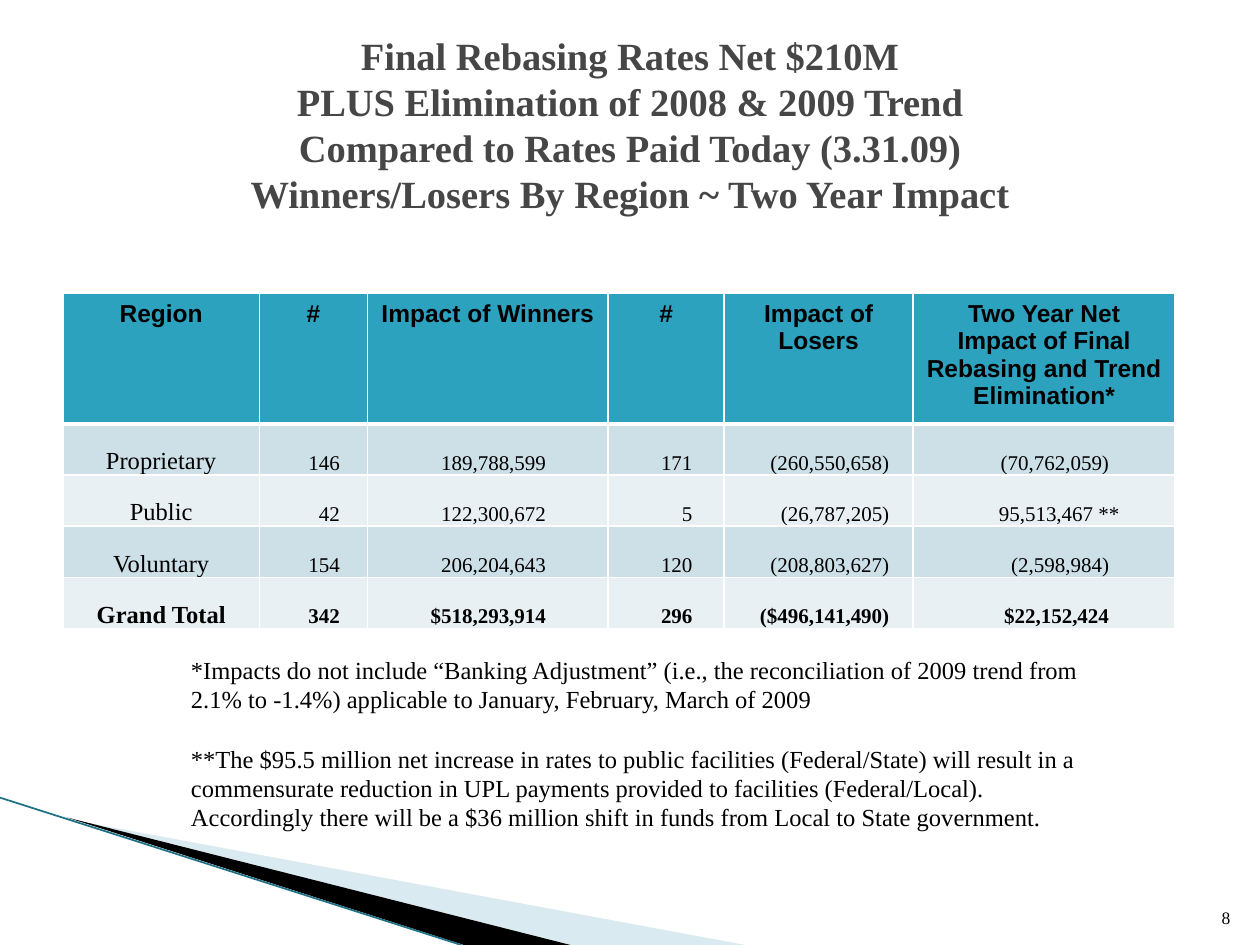
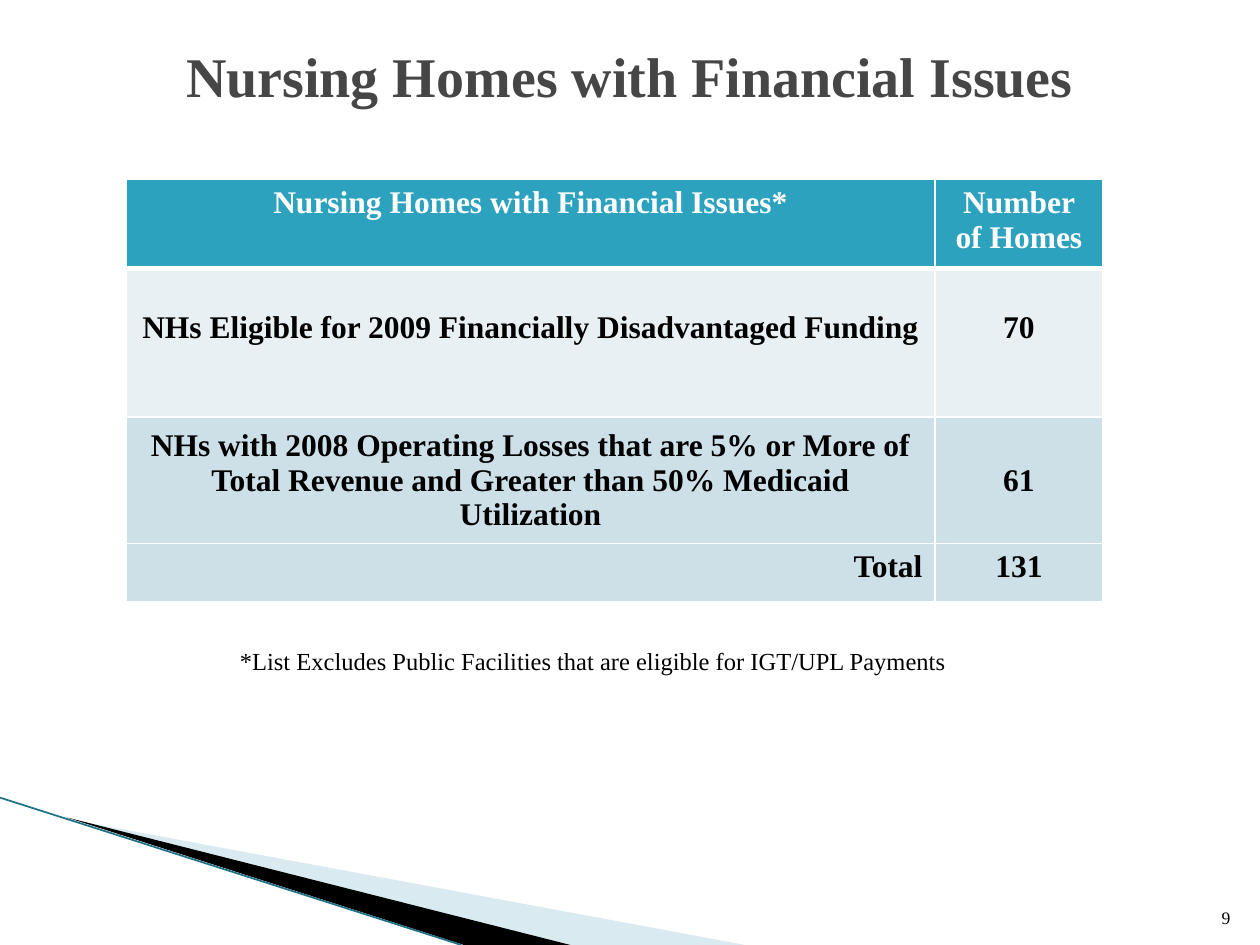
from dataclasses import dataclass

from lxml import etree
from pptx import Presentation
from pptx.dml.color import RGBColor
from pptx.enum.shapes import MSO_CONNECTOR
from pptx.enum.text import MSO_ANCHOR, MSO_AUTO_SIZE, PP_ALIGN
from pptx.oxml.ns import qn
from pptx.util import Cm, Pt

LEFT, CENTER, RIGHT = PP_ALIGN.LEFT, PP_ALIGN.CENTER, PP_ALIGN.RIGHT
TOP, MIDDLE, BOTTOM = MSO_ANCHOR.TOP, MSO_ANCHOR.MIDDLE, MSO_ANCHOR.BOTTOM
NO_AUTOFIT = MSO_AUTO_SIZE.NONE
STRAIGHT = MSO_CONNECTOR.STRAIGHT
TITLE_ONLY = 5


@dataclass(frozen=True)
class Theme:
    serif: str = "Times New Roman"
    sans: str = "Arial"
    title: str = "464646"
    black: str = "000000"
    white: str = "FFFFFF"
    header: str = "2DA2BF"
    row_dark: str = "CDE0E8"
    row_light: str = "E8F0F4"
    sweep: str = "A0CBDC"
    sweep_line: str = "1F7286"
    long_title_size: float = 22
    title_size: float = 32
    large_size: float = 18
    text_size: float = 14
    figure_size: float = 12
    number_size: float = 10


THEME = Theme()

REGION_COLUMNS = (3.96, 2.18, 4.85, 2.34, 3.81, 5.28)
REGION_HEADERS = (
    "Region", "#", "Impact of Winners", "#", "Impact of Losers",
    "Two Year Net Impact of Final Rebasing and Trend Elimination*",
)
REGION_ROWS = (
    ("Proprietary", "146", "189,788,599", "171", "(260,550,658)", "(70,762,059)"),
    ("Public", "42", "122,300,672", "5", "(26,787,205)", "95,513,467 **"),
    ("Voluntary", "154", "206,204,643", "120", "(208,803,627)", "(2,598,984)"),
    ("Grand Total", "342", "$518,293,914", "296", "($496,141,490)", "$22,152,424"),
)
# Right margin that lines up the figures of each numeric column
FIGURE_MARGINS = (0.56, 1.25, 0.64, 0.48, 1.33)
MARKED_FIGURE_MARGIN = 1.12


def color(value):
    return RGBColor.from_string(value)


def add_text(paragraph, text, size, font=THEME.serif, ink=THEME.black,
             bold=False, align=LEFT):
    paragraph.alignment = align
    run = paragraph.add_run()
    run.text = text
    run.font.name = font
    run.font.size = Pt(size)
    run.font.bold = bold
    run.font.color.rgb = color(ink)


def set_title(slide, lines, size, top, height):
    title = slide.shapes.title
    title.left, title.top = Cm(1.27), Cm(top)
    title.width, title.height = Cm(22.86), Cm(height)
    frame = title.text_frame
    frame.auto_size = NO_AUTOFIT
    frame.vertical_anchor = MIDDLE
    for index, line in enumerate(lines):
        paragraph = frame.add_paragraph() if index else frame.paragraphs[0]
        add_text(paragraph, line, size, ink=THEME.title, bold=True, align=CENTER)


def add_note(slide, box, paragraphs, size=THEME.text_size, align=LEFT,
             anchor=TOP, gap=0):
    """Add a text box; gap is the space in points between its paragraphs."""
    frame = slide.shapes.add_textbox(*map(Cm, box)).text_frame
    frame.word_wrap = True
    frame.vertical_anchor = anchor
    for index, text in enumerate(paragraphs):
        paragraph = frame.add_paragraph() if index else frame.paragraphs[0]
        if index:
            paragraph.space_before = Pt(gap)
        add_text(paragraph, text, size, align=align)


def add_sweep(slide, points, fill, opacity=100):
    """Add a filled outline through points given in centimetres."""
    corners = [(Cm(x), Cm(y)) for x, y in points]
    builder = slide.shapes.build_freeform(*corners[0])
    builder.add_line_segments(corners[1:], close=True)
    shape = builder.convert_to_shape()
    shape.shadow.inherit = False
    shape.fill.solid()
    shape.fill.fore_color.rgb = color(fill)
    shape.line.fill.background()
    if opacity < 100:
        srgb = shape.fill._xPr.find(f".//{qn('a:srgbClr')}")
        etree.SubElement(srgb, qn("a:alpha"), val=str(opacity * 1000))


def add_corner(slide):
    add_sweep(slide, ((1.4, 16.52), (15.02, 19.05), (11.5, 19.05)), THEME.sweep, 40)
    add_sweep(slide, ((1.35, 16.48), (11.5, 19.05), (9.35, 19.05)), THEME.black)
    edge = slide.shapes.add_connector(STRAIGHT, Cm(0), Cm(16.08), Cm(9.3), Cm(19.05))
    edge.line.color.rgb = color(THEME.sweep_line)
    edge.line.width = Pt(1)
    etree.SubElement(edge._element.spPr, qn("a:effectLst"))


def add_slide(presentation, number):
    slide = presentation.slides.add_slide(presentation.slide_layouts[TITLE_ONLY])
    add_corner(slide)
    add_note(slide, (24.03, 17.81, 1.02, 1.02), [str(number)],
             THEME.number_size, RIGHT, BOTTOM)
    return slide


def set_borders(cell, top=1, bottom=1):
    properties = cell._tc.get_or_add_tcPr()
    for side, width in (("L", 1), ("R", 1), ("T", top), ("B", bottom)):
        line = etree.SubElement(properties, qn(f"a:ln{side}"), w=str(Pt(width)))
        fill = etree.SubElement(line, qn("a:solidFill"))
        etree.SubElement(fill, qn("a:srgbClr"), val=THEME.white)


def add_table(slide, left, top, columns, rows):
    """Add a white-ruled table with the given column widths and row heights."""
    table = slide.shapes.add_table(
        len(rows), len(columns), Cm(left), Cm(top), Cm(sum(columns)), Cm(sum(rows))
    ).table
    for column, width in zip(table.columns, columns):
        column.width = Cm(width)
    for index, (row, height) in enumerate(zip(table.rows, rows)):
        row.height = Cm(height)
        for cell in row.cells:
            set_borders(cell, top=3 if index == 1 else 1, bottom=1 if index else 3)
    return table


def fill_cell(cell, text, size, fill, anchor=TOP, **style):
    cell.fill.solid()
    cell.fill.fore_color.rgb = color(fill)
    cell.vertical_anchor = anchor
    add_text(cell.text_frame.paragraphs[0], text, size, **style)


def add_region_table(slide):
    heights = [2.46] + [1.03] * len(REGION_ROWS)
    table = add_table(slide, 1.27, 5.92, REGION_COLUMNS, heights)
    for cell, text in zip(table.rows[0].cells, REGION_HEADERS):
        fill_cell(cell, text, THEME.text_size, THEME.header,
                  font=THEME.sans, bold=True, align=CENTER)
    for index, values in enumerate(REGION_ROWS):
        fill = THEME.row_light if index % 2 else THEME.row_dark
        bold = values[0] == "Grand Total"
        region, *figures = table.rows[index + 1].cells
        for cell in (region, *figures):
            cell.margin_left = cell.margin_right = cell.margin_top = Cm(0.03)
            cell.margin_bottom = Cm(0)
        fill_cell(region, values[0], THEME.text_size, fill, BOTTOM,
                  bold=bold, align=CENTER)
        for cell, text, margin in zip(figures, values[1:], FIGURE_MARGINS):
            marked = text.endswith("**")
            cell.margin_right = Cm(MARKED_FIGURE_MARGIN if marked else margin)
            fill_cell(cell, text, THEME.figure_size, fill, BOTTOM,
                      bold=bold, align=RIGHT)


def add_homes_table(slide):
    # Label, count, height, fill, ink, anchor, top margin, label alignment
    rows = (
        ("Nursing Homes with Financial Issues*", "Number of Homes",
         1.8, THEME.header, THEME.white, TOP, 0.13, CENTER),
        ("NHs Eligible for 2009 Financially Disadvantaged Funding", "70",
         3, THEME.row_light, THEME.black, TOP, 0.85, CENTER),
        ("NHs with 2008 Operating Losses that are 5% or More of Total Revenue "
         "and Greater than 50% Medicaid Utilization", "61",
         2.48, THEME.row_dark, THEME.black, MIDDLE, 0.13, CENTER),
        ("Total", "131",
         1.17, THEME.row_dark, THEME.black, TOP, 0.13, RIGHT),
    )
    table = add_table(slide, 2.54, 3.61, (16.31, 3.38), [row[2] for row in rows])
    for row, (label, count, _, fill, ink, anchor, margin, align) in zip(table.rows, rows):
        for cell, text, alignment in zip(row.cells, (label, count), (align, CENTER)):
            cell.margin_top = Cm(margin)
            fill_cell(cell, text, THEME.large_size, fill, anchor,
                      ink=ink, bold=True, align=alignment)


def build_region_slide(presentation):
    slide = add_slide(presentation, 8)
    set_title(slide, (
        "Final Rebasing Rates Net $210M",
        "PLUS Elimination of 2008 & 2009 Trend",
        "Compared to Rates Paid Today (3.31.09)",
        "Winners/Losers By Region ~ Two Year Impact",
    ), THEME.long_title_size, top=0.4, height=4.2)
    add_region_table(slide)
    add_note(slide, (3.6, 13.08, 18.85, 3.84), (
        "*Impacts do not include “Banking Adjustment” (i.e., the reconciliation "
        "of 2009 trend from 2.1% to -1.4%) applicable to January, February, "
        "March of 2009",
        "**The $95.5 million net increase in rates to public facilities "
        "(Federal/State) will result in a commensurate reduction in UPL payments "
        "provided to facilities (Federal/Local). Accordingly there will be a "
        "$36 million shift in funds from Local to State government.",
    ), gap=17)


def build_homes_slide(presentation):
    slide = add_slide(presentation, 9)
    set_title(slide, ("Nursing Homes with Financial Issues",),
              THEME.title_size, top=0.66, height=1.7)
    add_homes_table(slide)
    add_note(slide, (2.97, 12.9, 17.98, 0.86), (
        "*List Excludes Public Facilities that are eligible for IGT/UPL Payments",
    ), align=CENTER)


def main():
    presentation = Presentation()
    presentation.slide_width, presentation.slide_height = Cm(25.4), Cm(19.05)
    build_region_slide(presentation)
    build_homes_slide(presentation)
    presentation.save("out.pptx")


if __name__ == "__main__":
    main()
